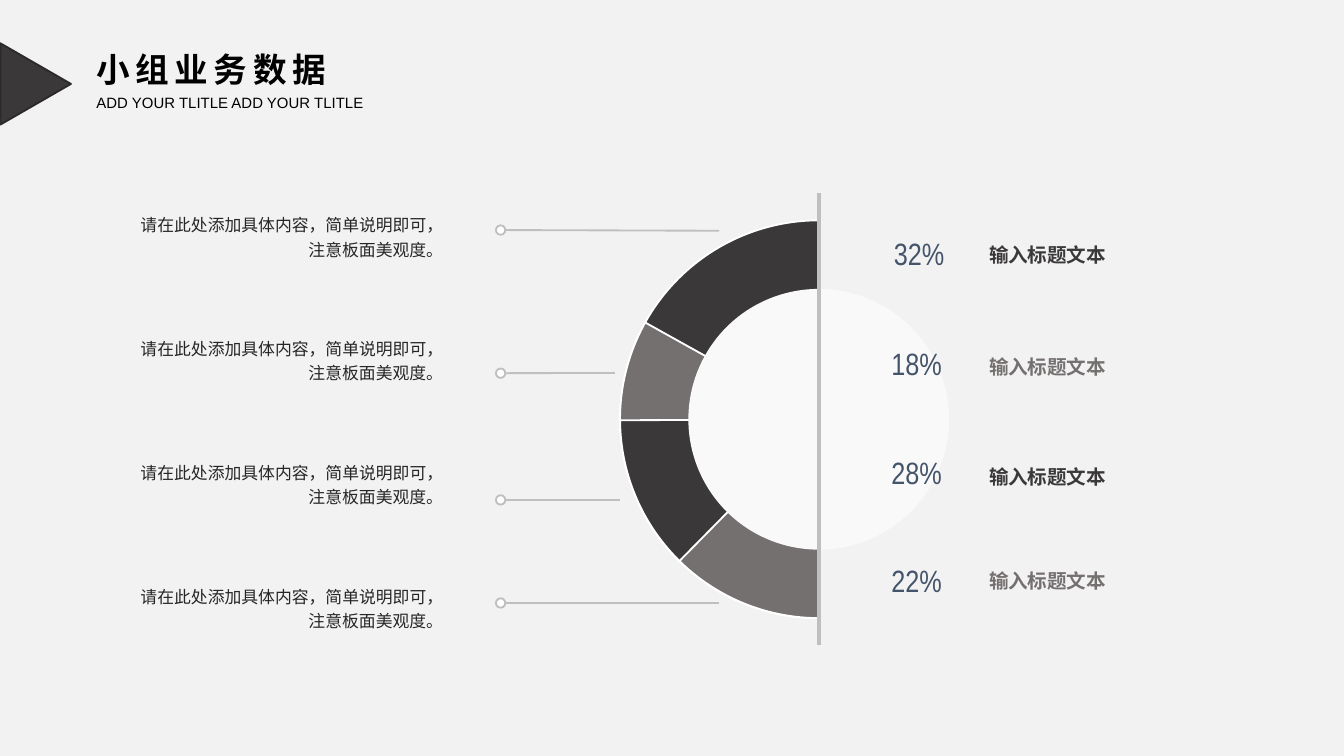
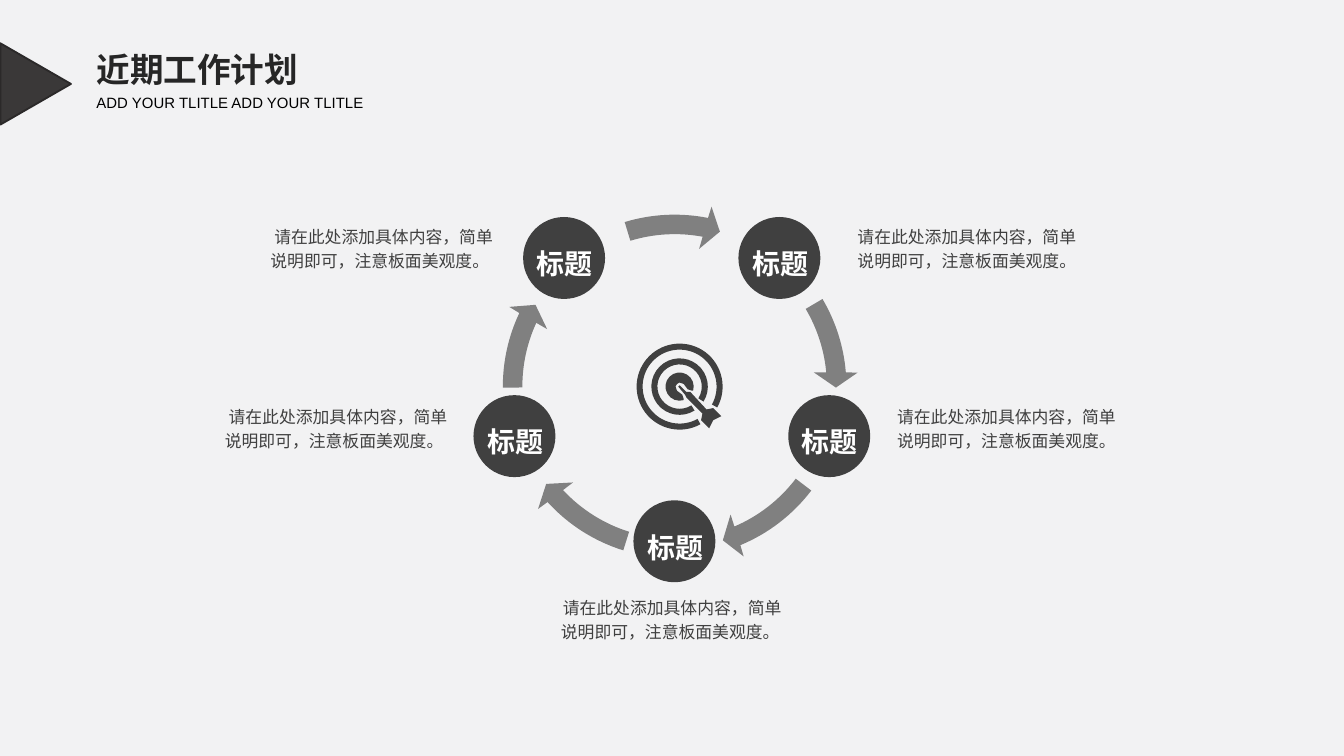
import math
from dataclasses import dataclass, replace
from typing import Optional

from lxml import etree
from pptx import Presentation
from pptx import util as u
from pptx.dml.color import RGBColor
from pptx.enum import shapes, text
from pptx.oxml import ns

# Lengths are counted in square grid cells: 100 columns by 56.25 rows.
SLIDE_WIDTH = u.Inches(10)
COLUMNS, ROWS = 100, 56.25
CELL = SLIDE_WIDTH / COLUMNS

BACKGROUND = "F2F2F3"
DARK, WARM_GREY, EDGE = "3A3838", "757070", "2B2929"
RULE, ARROW, BADGE = "BFBFBF", "808080", "404040"
BLACK, INK, BLUE_GREY, WHITE, DISC = "000000", "262626", "44546A", "FFFFFF", "F9F9F9"
CJK = "Noto Sans CJK SC"
BODY = "请在此处添加具体内容，简单说明即可，注意板面美观度。"

LEFT, CENTER = text.PP_ALIGN.LEFT, text.PP_ALIGN.CENTER
RIGHT, JUSTIFY = text.PP_ALIGN.RIGHT, text.PP_ALIGN.JUSTIFY
TOP, MIDDLE = text.MSO_ANCHOR.TOP, text.MSO_ANCHOR.MIDDLE
Point = tuple[float, float]
# A segment holds one point for a line, or two controls and an end for a curve.
Contour = list[tuple[Point, ...]]


@dataclass(frozen=True)
class Area:
    left: float
    top: float
    width: float
    height: float

    def emu(self) -> list[int]:
        return [cells(n) for n in (self.left, self.top, self.width, self.height)]


@dataclass(frozen=True)
class Style:
    size: float
    color: str
    font: str = "Arial"
    bold: bool = False
    align: text.PP_ALIGN = LEFT
    anchor: text.MSO_ANCHOR = TOP
    line_spacing: float = 1.0
    inset: Point = (0, 0)
    wrap: bool = True
    grow: bool = False
    tracking: float = 0


@dataclass(frozen=True)
class Sector:
    end_degrees: float
    color: str


@dataclass(frozen=True)
class Callout:
    row: float
    line_end: Point


@dataclass(frozen=True)
class Share:
    value: str
    area: Area
    title_top: float
    color: str


@dataclass(frozen=True)
class Step:
    badge: Point
    note: Point
    align: text.PP_ALIGN


@dataclass(frozen=True)
class Arrow:
    start: float
    tip: float


TITLE = Style(18, INK, bold=True, anchor=MIDDLE, line_spacing=0.9, inset=(0.75, 0.38))
SUBTITLE = Style(8, BLACK, inset=(0.75, 0.38), grow=True)
CALLOUT = Style(9, INK, align=RIGHT, anchor=MIDDLE, line_spacing=1.2)
PERCENT = Style(16.5, BLUE_GREY, "Arial Narrow", align=JUSTIFY, anchor=MIDDLE, wrap=False)
SHARE_TITLE = Style(10.5, DARK, bold=True, align=JUSTIFY, anchor=MIDDLE, wrap=False)
NOTE = Style(9, BADGE, CJK, line_spacing=1.2, inset=(0.6, 0.3), grow=True)
BADGE_LABEL = Style(15, WHITE, "Calibri", bold=True, align=CENTER, inset=(1, 0.5),
                    wrap=False, grow=True)

SECTOR_START = 90.16
SECTORS = [Sector(270, DARK), Sector(209.1, WARM_GREY),
           Sector(179.7, DARK), Sector(134.53, WARM_GREY)]
CALLOUTS = [Callout(17.12, (53.5, 17.17)), Callout(27.77, (45.75, 27.75)),
            Callout(37.2, (46.1, 37.2)), Callout(44.87, (53.5, 44.87))]
SHARES = [Share("32%", Area(66.52, 16.85, 7.7, 4), 17.95, DARK),
          Share("18%", Area(66.33, 25.1, 7.7, 3.9), 26.3, WARM_GREY),
          Share("28%", Area(66.33, 33.2, 7.7, 3.9), 34.5, DARK),
          Share("22%", Area(66.33, 41.15, 7.7, 4.1), 42.2, WARM_GREY)]

STEPS = [Step((38.92, 16.15), (19.45, 16.26), RIGHT),
         Step((54.94, 16.15), (63.2, 16.26), LEFT),
         Step((58.65, 29.4), (66.15, 29.66), LEFT),
         Step((35.23, 29.4), (16.05, 29.66), RIGHT),
         Step((47.13, 37.23), (41.1, 43.86), CENTER)]
ARROWS = [Arrow(-30.6, 0.4), Arrow(37.3, 72.6), Arrow(107.4, 142.8),
          Arrow(179.6, 210.4), Arrow(253.1, 286.3)]
RING_FRAME = Area(36.5, 15.1, 27.4, 27.4)
RING_CENTER: Point = (50.2, 28.76)
TARGET_FRAME = Area(47.37, 25.57, 6.4, 6.4)
TARGET_CENTER: Point = (50.57, 28.77)
# Offsets from the centre of the target.
CORE_NOTCH = [(0.9, 0.3), (0.6, 0.2), (0.3, -0.2), (0, -0.3), (-0.2, -0.2), (-0.3, 0),
              (-0.2, 0.3), (0.2, 0.6), (0.3, 0.9)]
DART = [(0, -0.1), (0.5, 0.4), (0.8, 0.4), (2, 1.7), (2.5, 1.6), (3.1, 2.2), (2.5, 2.5),
        (2.2, 3.1), (1.6, 2.5), (1.7, 2), (0.5, 0.8), (0.4, 0.6), (-0.1, 0)]


def cells(count: float) -> int:
    return round(count * CELL)


def rgb(value: str) -> RGBColor:
    return RGBColor.from_string(value)


def paint(shape, fill: str, line: Optional[str] = None) -> None:
    shape.shadow.inherit = False
    shape.fill.solid()
    shape.fill.fore_color.rgb = rgb(fill)
    if line:
        shape.line.color.rgb = rgb(line)
        shape.line.width = u.Pt(1)
    else:
        shape.line.fill.background()


def add_preset(page, kind, area: Area, fill: str, line: Optional[str] = None):
    shape = page.shapes.add_shape(kind, *area.emu())
    paint(shape, fill, line)
    return shape


def add_text(page, area: Area, words: str, style: Style) -> None:
    box = page.shapes.add_textbox(*area.emu())
    frame = box.text_frame
    frame.text = words
    frame.word_wrap = style.wrap
    frame.vertical_anchor = style.anchor
    frame.margin_left = frame.margin_right = cells(style.inset[0])
    frame.margin_top = frame.margin_bottom = cells(style.inset[1])
    if style.grow:
        frame.auto_size = text.MSO_AUTO_SIZE.SHAPE_TO_FIT_TEXT
    para = frame.paragraphs[0]
    para.alignment = style.align
    para.line_spacing = style.line_spacing
    span = para.runs[0]
    span.font.size = u.Pt(style.size)
    span.font.bold = style.bold
    span.font.color.rgb = rgb(style.color)
    span.font.name = style.font
    properties = span.font._element
    etree.SubElement(properties, ns.qn("a:ea")).set("typeface", CJK)
    if style.tracking:
        properties.set("spc", str(round(style.tracking * 100)))


def add_line(page, start: Point, end: Point, width: float) -> None:
    line = page.shapes.add_connector(shapes.MSO_CONNECTOR.STRAIGHT,
                                     *(cells(n) for n in start + end))
    line.line.color.rgb = rgb(RULE)
    line.line.width = u.Pt(width)
    etree.SubElement(line._element.spPr, ns.qn("a:effectLst"))


def add_outline(page, frame: Area, contours: list[Contour], fill: str) -> None:
    """Draw closed contours of lines and curves as one freeform that spans the frame."""
    left, top, width, height = frame.emu()
    builder = page.shapes.build_freeform(left, top, scale=1.0)
    builder.add_line_segments([(left + width, top), (left + width, top + height)])
    shape = builder.convert_to_shape()
    paint(shape, fill)
    outline = next(shape._element.iter(ns.qn("a:path")))
    for child in list(outline):
        outline.remove(child)
    for contour in contours:
        for number, segment in enumerate(contour):
            line_tag = "a:lnTo" if number else "a:moveTo"
            tag = "a:cubicBezTo" if len(segment) == 3 else line_tag
            command = etree.SubElement(outline, ns.qn(tag))
            for x, y in segment:
                point = etree.SubElement(command, ns.qn("a:pt"))
                point.set("x", str(cells(x) - left))
                point.set("y", str(cells(y) - top))
        etree.SubElement(outline, ns.qn("a:close"))


def polar(center: Point, radius: float, degrees: float) -> Point:
    angle = math.radians(degrees)
    return center[0] + radius * math.cos(angle), center[1] + radius * math.sin(angle)


def arc(center: Point, radius: float, start: float, end: float) -> Contour:
    """Go to the start of an arc, then follow it in curves of at most 90 degrees."""
    count = math.ceil(abs(end - start) / 90)
    sweep = (end - start) / count
    reach = 4 / 3 * math.tan(math.radians(sweep / 4))
    far, lean = radius * math.hypot(1, reach), math.degrees(math.atan(reach))
    contour: Contour = [(polar(center, radius, start),)]
    for number in range(count):
        begin, finish = start + number * sweep, start + (number + 1) * sweep
        contour.append((polar(center, far, begin + lean), polar(center, far, finish - lean),
                        polar(center, radius, finish)))
    return contour


def add_arrow(page, arrow: Arrow) -> None:
    head: Contour = [(polar(RING_CENTER, radius, arrow.tip - back),)
                     for radius, back in ((13.65, 4.7), (12, 0), (10.4, 6.2))]
    outer = arc(RING_CENTER, 12.78, arrow.start, arrow.tip - 5.1)
    inner = arc(RING_CENTER, 11.33, arrow.tip - 5.7, arrow.start)
    add_outline(page, RING_FRAME, [outer + head + inner], ARROW)


def add_target(page) -> None:
    def placed(offsets: list[Point]) -> Contour:
        return [((TARGET_CENTER[0] + x, TARGET_CENTER[1] + y),) for x, y in offsets]

    def band(outer: float, inner: float, start: float, end: float) -> Contour:
        return (arc(TARGET_CENTER, outer, start, end)
                + arc(TARGET_CENTER, inner, end, start))

    core = arc(TARGET_CENTER, 1.05, 73, 377) + placed(CORE_NOTCH)
    add_outline(page, TARGET_FRAME, [placed(DART), core, band(2.1, 1.65, 58, 392),
                                     band(3.2, 2.75, 61, 389)], BADGE)


def add_page(deck, title: str, style: Style):
    """Add a slide with the shared heading."""
    page = deck.slides.add_slide(deck.slide_layouts[6])
    add_text(page, Area(6.42, 2.8, 29.2, 5), title, style)
    add_text(page, Area(6.42, 6.6, 23.2, 2.1), "ADD YOUR TLITLE ADD YOUR TLITLE", SUBTITLE)
    marker = add_preset(page, shapes.MSO_SHAPE.ISOSCELES_TRIANGLE,
                        Area(-0.37, 3.62, 6.05, 5.25), DARK, EDGE)
    marker.rotation = 90
    return page


def build_data_page(deck):
    page = add_page(deck, "小组业务数据",
                    replace(TITLE, font=CJK, color=BLACK, tracking=3))
    for sector in SECTORS:
        pie = add_preset(page, shapes.MSO_SHAPE.PIE, Area(46.14, 16.4, 29.6, 29.6),
                         sector.color, WHITE)
        # One adjustment unit is 100000 / 60000 degrees.
        pie.adjustments[0] = SECTOR_START * 0.6
        pie.adjustments[1] = sector.end_degrees * 0.6
    add_preset(page, shapes.MSO_SHAPE.OVAL, Area(51.22, 21.5, 19.4, 19.4), DISC)
    add_line(page, (60.94, 14.4), (60.94, 48), 2.25)
    for number, callout in enumerate(CALLOUTS):
        add_text(page, Area(10.25, 14.6 + 9.22 * number, 22.7, 5.8), BODY, CALLOUT)
        add_line(page, callout.line_end, (37.6, callout.row), 1)
        add_preset(page, shapes.MSO_SHAPE.OVAL,
                   Area(36.9, callout.row - 0.35, 0.7, 0.7), WHITE, RULE)
    for share in SHARES:
        add_text(page, share.area, share.value, PERCENT)
        add_text(page, Area(73.6, share.title_top, 26.4, 2), "输入标题文本",
                 replace(SHARE_TITLE, color=share.color))
    return page


def build_plan_page(deck) -> None:
    page = add_page(deck, "近期工作计划", TITLE)
    for step in STEPS:
        words = BODY if step.align == LEFT else BODY + " "
        add_text(page, Area(*step.note, 17.8, 4.2), words, replace(NOTE, align=step.align))
    for arrow in ARROWS:
        add_arrow(page, arrow)
    for step in STEPS:
        left, top = step.badge
        add_preset(page, shapes.MSO_SHAPE.OVAL, Area(left, top, 6.1, 6.1), BADGE)
        add_text(page, Area(left, top + 1.72, 6.2, 3.5), "标题", BADGE_LABEL)
    add_target(page)


def main() -> None:
    deck = Presentation()
    deck.slide_width, deck.slide_height = SLIDE_WIDTH, cells(ROWS)
    page = build_data_page(deck)
    backdrop = add_preset(page, shapes.MSO_SHAPE.RECTANGLE, Area(0, 0, COLUMNS, ROWS),
                          BACKGROUND)
    # The master carries the backdrop, behind its placeholders.
    deck.slide_master.shapes._spTree.insert(2, backdrop._element)
    build_plan_page(deck)
    deck.save("out.pptx")


if __name__ == "__main__":
    main()
